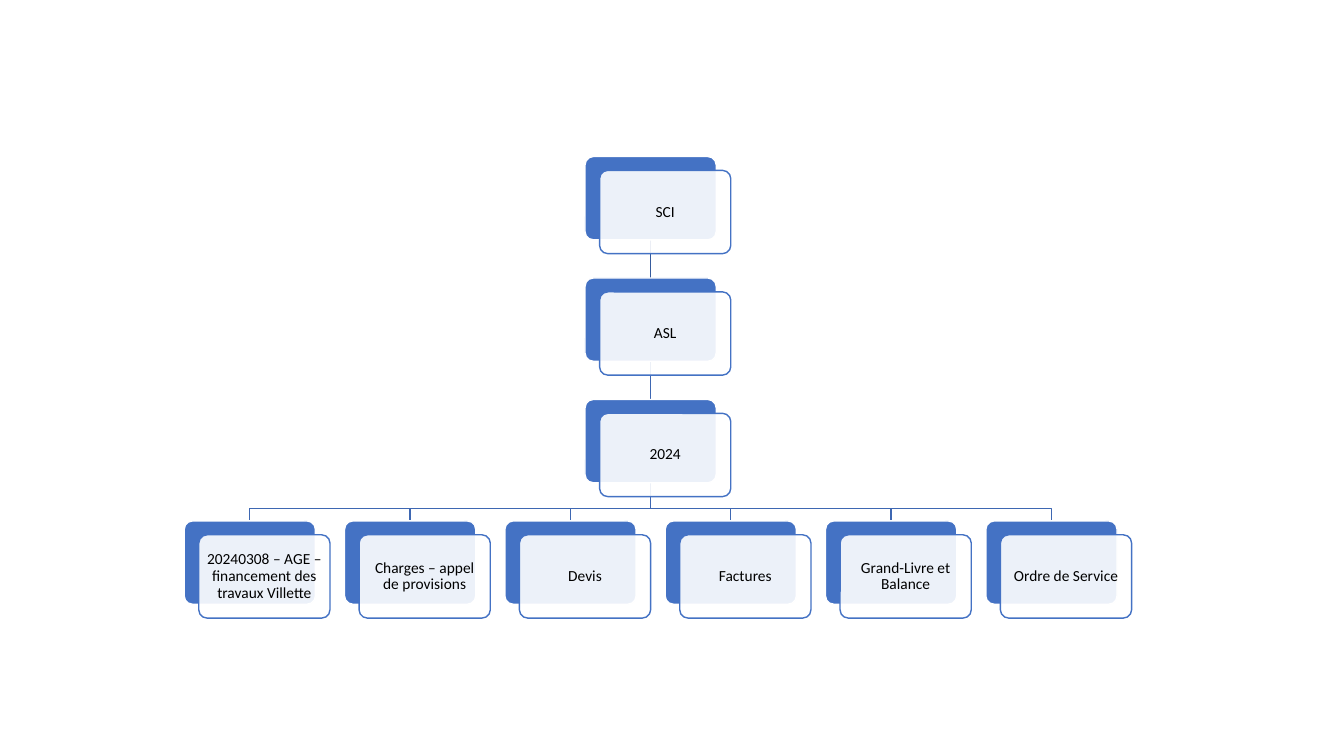
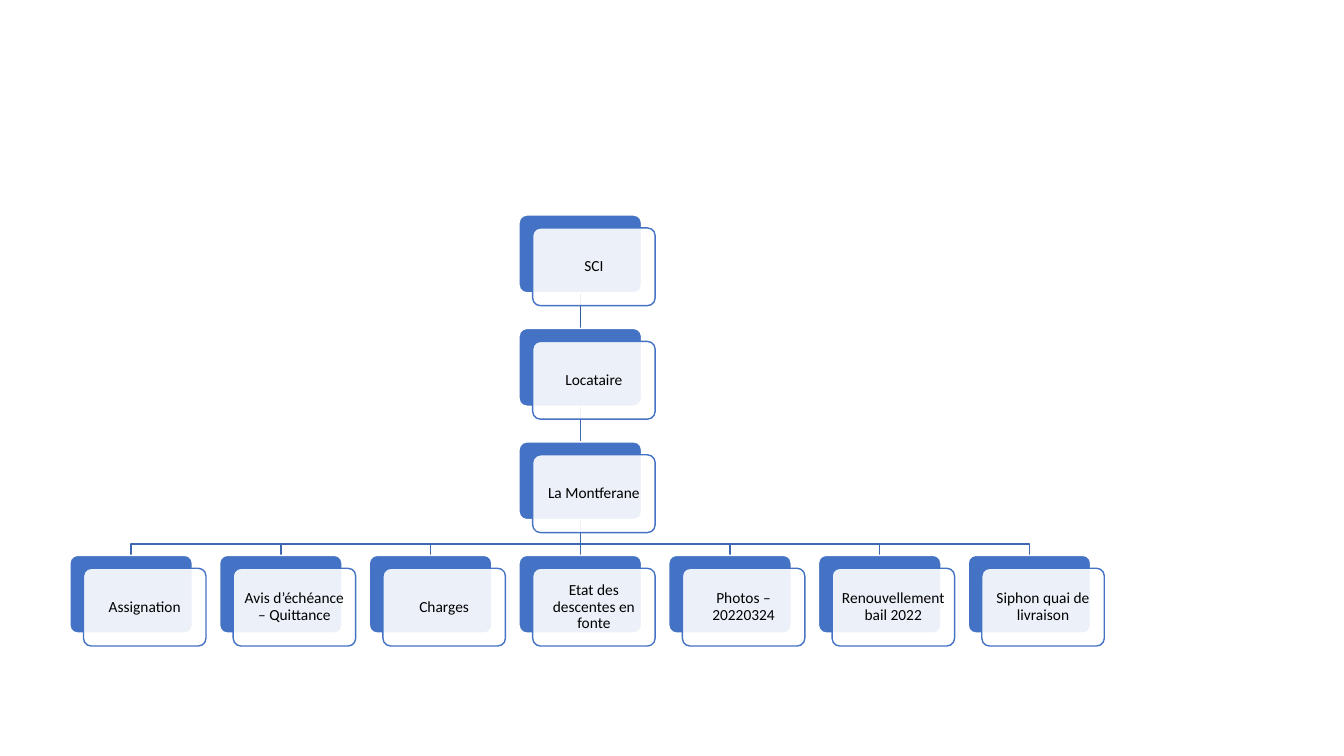
from lxml import etree
from pptx import Presentation
from pptx.dml.color import RGBColor
from pptx.enum.shapes import MSO_CONNECTOR, MSO_SHAPE
from pptx.enum.text import MSO_ANCHOR, PP_ALIGN
from pptx.oxml.ns import qn
from pptx.util import Pt

ROUNDED = MSO_SHAPE.ROUNDED_RECTANGLE
STRAIGHT = MSO_CONNECTOR.STRAIGHT
MIDDLE = MSO_ANCHOR.MIDDLE
CENTER = PP_ALIGN.CENTER

BLUE = "4472C4"
WHITE = "FFFFFF"
BLACK = "000000"
ROOT_LINK = "365B9D"
LINK = "3E67B2"

CHARTS = [
    dict(
        left=131.6, top=111.8, width=93.7,
        trunk=["SCI", "ASL", "2024"],
        leaves=[
            "20240308 – AGE – financement des travaux Villette",
            "Charges – appel de provisions",
            "Devis",
            "Factures",
            "Grand-Livre et Balance",
            "Ordre de Service",
        ],
    ),
    dict(
        left=49.9, top=153.6, width=87.5,
        trunk=["SCI", "Locataire", "La Montferane"],
        leaves=[
            "Assignation",
            "Avis d’échéance – Quittance",
            "Charges",
            "Etat des descentes en fonte",
            "Photos – 20220324",
            "Renouvellement bail 2022",
            "Siphon quai de livraison",
        ],
    ),
]


def color(code):
    return RGBColor.from_string(code)


class OrgCharts:
    """Draws organisation charts, one per page, in a shared style."""

    font = "Calibri"
    size = 11
    inset = 3.3
    line_width = 1
    corner = 0.1
    opacity = 90

    def __init__(self):
        self.deck = Presentation()
        self.deck.slide_width = Pt(960)
        self.deck.slide_height = Pt(540)
        self.page = None

    def add_page(self):
        self.page = self.deck.slides.add_slide(self.deck.slide_layouts[6])

    def outline(self, item, code):
        item.line.color.rgb = color(code)
        item.line.width = Pt(self.line_width)

    def panel(self, left, top, width, height, fill, line):
        box = self.page.shapes.add_shape(
            ROUNDED, Pt(left), Pt(top), Pt(width), Pt(height))
        box.adjustments[0] = self.corner
        box.shadow.inherit = False
        box.fill.solid()
        box.fill.fore_color.rgb = color(fill)
        self.outline(box, line)
        return box

    def label(self, box, text):
        frame = box.text_frame
        frame.text = text
        frame.word_wrap = True
        frame.vertical_anchor = MIDDLE
        frame.margin_left = frame.margin_right = Pt(self.inset)
        frame.margin_top = frame.margin_bottom = Pt(self.inset)
        para = frame.paragraphs[0]
        para.alignment = CENTER
        para.line_spacing = 0.9
        font = para.runs[0].font
        font.name = self.font
        font.size = Pt(self.size)
        font.color.rgb = color(BLACK)

    def card(self, left, top, width, height, text):
        self.panel(left, top, width, height, BLUE, WHITE)
        shift = width / 9
        front = self.panel(
            left + shift, top + 0.95 * shift, width, height, WHITE, BLUE)
        fill = front._element.spPr.find(qn("a:solidFill"))
        alpha = etree.SubElement(fill[0], qn("a:alpha"))
        alpha.set("val", str(self.opacity * 1000))
        self.label(front, text)

    def straight_link(self, x, top, bottom, code):
        link = self.page.shapes.add_connector(
            STRAIGHT, Pt(x), Pt(top), Pt(x), Pt(bottom))
        etree.SubElement(link._element.spPr, qn("a:effectLst"))
        self.outline(link, code)

    def elbow_link(self, start, end, top, bottom):
        bend = top + 0.68 * (bottom - top)
        outline = self.page.shapes.build_freeform(Pt(start), Pt(top), scale=1.0)
        outline.add_line_segments(
            [(Pt(start), Pt(bend)), (Pt(end), Pt(bend)), (Pt(end), Pt(bottom))],
            close=False)
        link = outline.convert_to_shape()
        link.shadow.inherit = False
        link.fill.background()
        self.outline(link, LINK)

    def chart(self, left, top, width, trunk, leaves):
        self.add_page()
        height = 0.635 * width
        column_step = width * 11 / 9
        row_step = 0.926 * width
        trunk_left = left + column_step * (len(leaves) - 1) / 2
        axis = trunk_left + width / 2
        rows = [top + row_step * level for level in range(len(trunk) + 1)]
        columns = [left + column_step * index for index in range(len(leaves))]

        for column in columns:
            end = column + width / 2
            if abs(end - axis) < 1:
                self.straight_link(axis, rows[-2] + height, rows[-1], LINK)
            else:
                self.elbow_link(axis, end, rows[-2] + height, rows[-1])
        for level in range(len(trunk) - 1):
            self.straight_link(axis, rows[level] + height, rows[level + 1],
                               LINK if level else ROOT_LINK)

        for row, text in zip(rows, trunk):
            self.card(trunk_left, row, width, height, text)
        for column, text in zip(columns, leaves):
            self.card(column, rows[-1], width, height, text)


def main():
    charts = OrgCharts()
    for content in CHARTS:
        charts.chart(**content)
    charts.deck.save("out.pptx")


if __name__ == "__main__":
    main()
